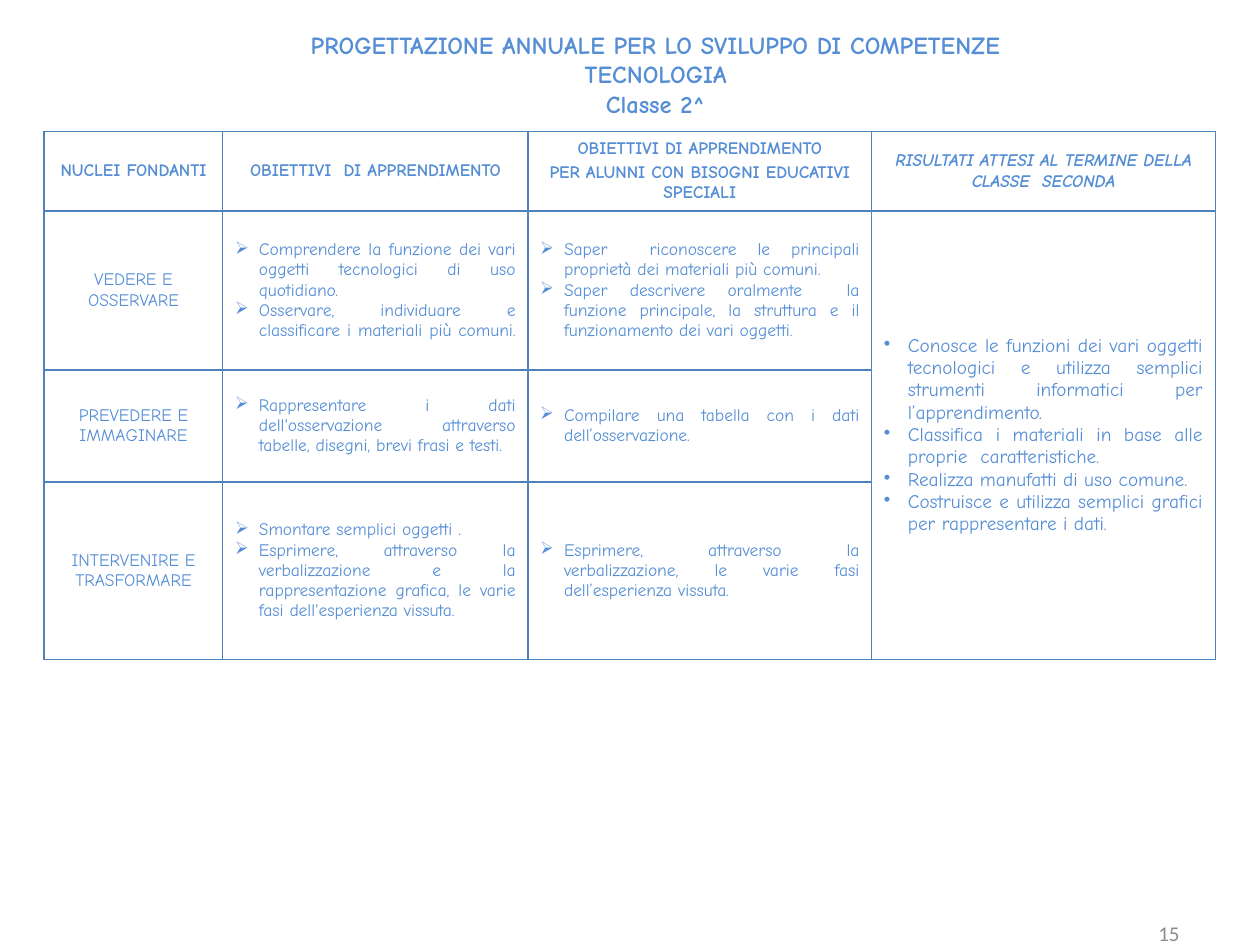
from dataclasses import dataclass
from typing import Optional

from lxml import etree
from pptx import Presentation, util as u
from pptx.dml.color import RGBColor
from pptx.enum import text as t
from pptx.oxml import ns

TEXT_BLUE = RGBColor(0x55, 0x8E, 0xD5)
BORDER_BLUE = RGBColor(0x4F, 0x81, 0xBD)
PAGE_GREY = RGBColor(0x8C, 0x8C, 0x8C)
FONT = "Comic Neue"
ARROW, DOT = "➢", "•"
HANGING = u.Cm(0.48)
CENTER, JUSTIFY, RIGHT = t.PP_ALIGN.CENTER, t.PP_ALIGN.JUSTIFY, t.PP_ALIGN.RIGHT
COLUMN_WIDTHS = [3.6, 6.15, 6.93, 6.93]
ROW_HEIGHTS = [1.6, 3.2, 2.26, 3.58]


@dataclass
class Entry:
    lines: list[str]
    size: float = 10
    bold: bool = False
    italic: bool = False
    bullet: Optional[str] = None
    space_before: float = 0


def heading(*lines: str, italic: bool = False) -> Entry:
    return Entry(list(lines), bold=True, italic=italic, space_before=2)


def goals(*lines: str) -> Entry:
    return Entry(list(lines), bullet=ARROW)


ROWS = [
    [
        heading("NUCLEI FONDANTI"),
        heading("OBIETTIVI  DI APPRENDIMENTO"),
        heading("OBIETTIVI DI APPRENDIMENTO", "PER ALUNNI CON BISOGNI EDUCATIVI SPECIALI"),
        heading("RISULTATI ATTESI AL TERMINE DELLA CLASSE  SECONDA", italic=True),
    ],
    [
        Entry(["VEDERE E OSSERVARE"], space_before=2),
        goals(
            "Comprendere la funzione dei vari oggetti tecnologici di uso quotidiano.",
            "Osservare, individuare e classificare i materiali più comuni. ",
        ),
        goals(
            "Saper  riconoscere le principali proprietà dei materiali più comuni.",
            "Saper descrivere oralmente  la funzione principale, la struttura e il "
            "funzionamento dei vari oggetti.",
        ),
        Entry(
            [
                "Conosce le funzioni dei vari oggetti tecnologici e utilizza semplici "
                "strumenti informatici per l’apprendimento. ",
                "Classifica i materiali in base alle proprie  caratteristiche. ",
                "Realizza manufatti di uso comune. ",
                "Costruisce e utilizza semplici grafici per rappresentare i dati.",
            ],
            size=11,
            bullet=DOT,
        ),
    ],
    [
        Entry(["PREVEDERE E IMMAGINARE"]),
        goals(
            "Rappresentare i dati dell'osservazione attraverso tabelle, disegni, "
            "brevi frasi e testi. "
        ),
        goals("Compilare una tabella con i dati dell’osservazione."),
    ],
    [
        Entry(["INTERVENIRE E TRASFORMARE"]),
        goals(
            "Smontare semplici oggetti .",
            "Esprimere, attraverso la verbalizzazione e la rappresentazione grafica, "
            "le varie fasi dell'esperienza vissuta.",
        ),
        goals(
            "Esprimere, attraverso la verbalizzazione, le varie fasi "
            "dell’esperienza vissuta."
        ),
    ],
]


def write_text(frame, lines: list[str], *, size: float, font: str = FONT,
               color: RGBColor = TEXT_BLUE, bold: bool = False, italic: bool = False,
               align=CENTER, bullet: Optional[str] = None, space_before: float = 0) -> None:
    for index, line in enumerate(lines):
        para = frame.add_paragraph() if index else frame.paragraphs[0]
        para.alignment = align
        para.space_before = u.Pt(space_before)
        span = para.add_run()
        span.text = line
        span.font.size = u.Pt(size)
        span.font.name = font
        span.font.bold = bold
        span.font.italic = italic
        span.font.color.rgb = color
        if bullet:
            layout = para._p.get_or_add_pPr()
            layout.set("marL", str(HANGING))
            layout.set("indent", str(-HANGING))
            etree.SubElement(layout, ns.qn("a:buChar"), char=bullet)


def add_label(page, left: float, top: float, width: float, height: float,
              lines: list[str], *, wrap: bool = True,
              anchor=t.MSO_ANCHOR.TOP, **style) -> None:
    box = page.shapes.add_textbox(u.Cm(left), u.Cm(top), u.Cm(width), u.Cm(height))
    box.text_frame.word_wrap = wrap
    box.text_frame.vertical_anchor = anchor
    write_text(box.text_frame, lines, **style)


def style_cell(cell) -> None:
    properties = cell._tc.get_or_add_tcPr()
    for side in ("lnL", "lnR", "lnT", "lnB"):
        line = etree.SubElement(properties, ns.qn(f"a:{side}"), w=str(u.Pt(1)))
        fill = etree.SubElement(line, ns.qn("a:solidFill"))
        etree.SubElement(fill, ns.qn("a:srgbClr"), val=str(BORDER_BLUE))
    cell.fill.background()
    cell.vertical_anchor = t.MSO_ANCHOR.MIDDLE
    cell.margin_left = cell.margin_right = u.Cm(0.25)
    cell.margin_top = cell.margin_bottom = u.Cm(0.13)


def add_plan(page, left: float, top: float) -> None:
    table = page.shapes.add_table(
        len(ROW_HEIGHTS), len(COLUMN_WIDTHS), u.Cm(left), u.Cm(top),
        u.Cm(sum(COLUMN_WIDTHS)), u.Cm(sum(ROW_HEIGHTS)),
    ).table
    table.first_row = table.horz_banding = False
    for column, width in zip(table.columns, COLUMN_WIDTHS):
        column.width = u.Cm(width)
    for row, height in zip(table.rows, ROW_HEIGHTS):
        row.height = u.Cm(height)
    for cell in table.iter_cells():
        style_cell(cell)
    table.cell(1, 3).merge(table.cell(3, 3))
    for row, entries in enumerate(ROWS):
        for column, entry in enumerate(entries):
            write_text(
                table.cell(row, column).text_frame, entry.lines, size=entry.size,
                bold=entry.bold, italic=entry.italic, bullet=entry.bullet,
                align=JUSTIFY if entry.bullet else CENTER,
                space_before=entry.space_before,
            )


def main() -> None:
    deck = Presentation()
    deck.slide_width, deck.slide_height = u.Cm(25.4), u.Cm(19.05)
    page = deck.slides.add_slide(deck.slide_layouts[6])
    add_label(
        page, 4.75, 0.48, 16.94, 2.06,
        ["PROGETTAZIONE ANNUALE PER LO SVILUPPO DI COMPETENZE", "TECNOLOGIA", "Classe 2^"],
        wrap=False, size=14, bold=True,
    )
    add_plan(page, 0.89, 2.65)
    add_label(page, 18.1, 18.31, 5.93, 1.02, ["15"], anchor=t.MSO_ANCHOR.MIDDLE,
              size=12, font="Calibri", color=PAGE_GREY, align=RIGHT)
    deck.save("out.pptx")


if __name__ == "__main__":
    main()
